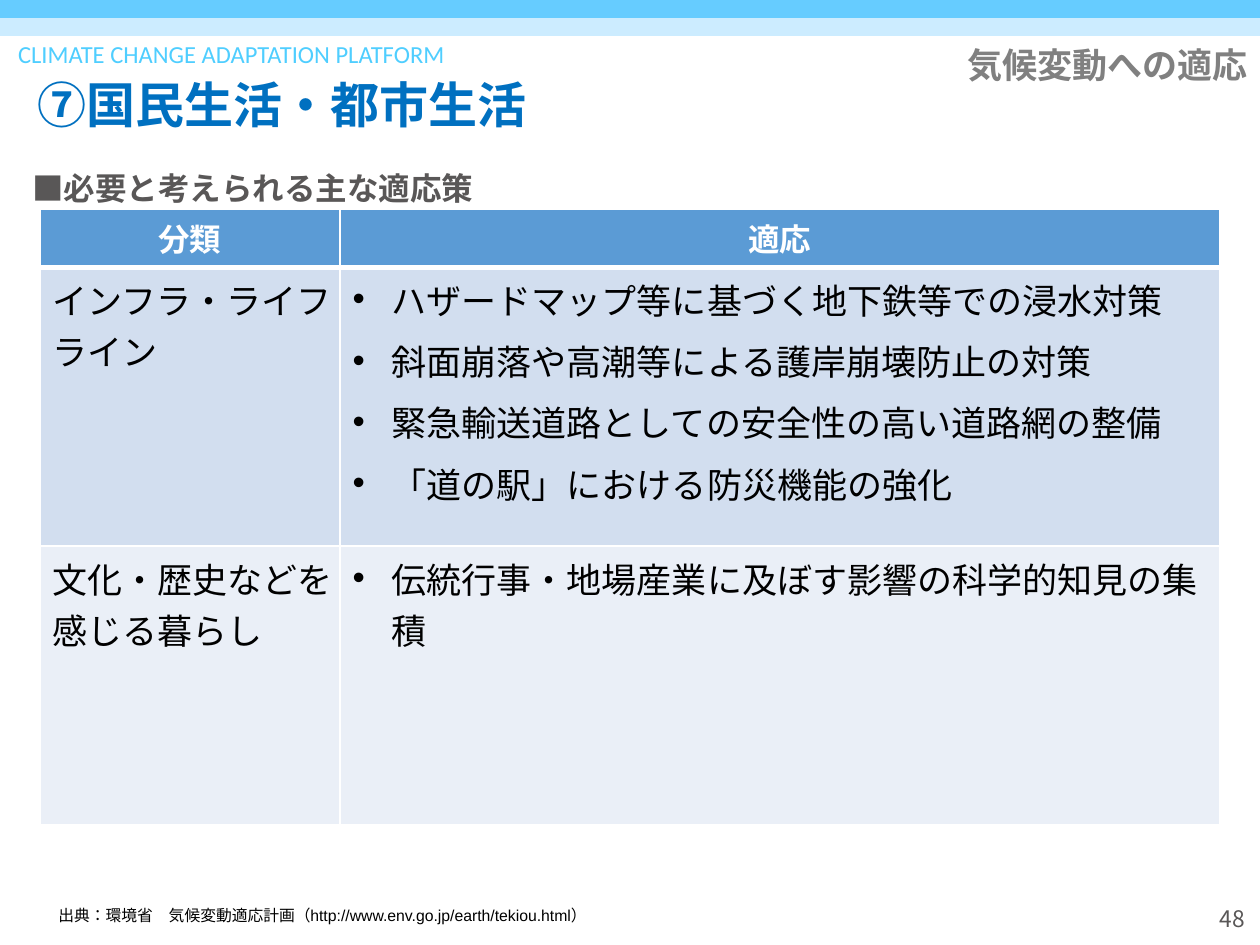
from pptx import Presentation
from pptx.dml.color import RGBColor
from pptx.enum.shapes import MSO_SHAPE
from pptx.enum.text import MSO_ANCHOR, PP_ALIGN
from pptx.oxml.ns import qn
from pptx.util import Pt
from lxml.etree import SubElement

SKY = RGBColor(0x66, 0xCC, 0xFF)
PALE = RGBColor(0xCC, 0xEC, 0xFF)
CYAN = RGBColor(0x4F, 0xCE, 0xFF)
BLUE = RGBColor(0x00, 0x70, 0xC0)
GRAY = RGBColor(0x80, 0x80, 0x80)
DARK = RGBColor(0x59, 0x57, 0x57)
BLACK = RGBColor(0, 0, 0)
WHITE = RGBColor(0xFF, 0xFF, 0xFF)
HEAD = RGBColor(0x5B, 0x9B, 0xD5)
BANDS = [RGBColor(0xD2, 0xDE, 0xEF), RGBColor(0xEA, 0xEF, 0xF7)]
NOTO = "Noto Sans CJK JP"

STRIPES = [SKY, PALE]
LABELS = [
    ((18, 36, 1231, 32), ["CLIMATE CHANGE ADAPTATION PLATFORM"],
     dict(size=14, font="Calibri", color=CYAN, space=Pt(18.7), inset=0)),
    ((0, 16, 1260, 183), ["⑦国民生活・都市生活"],
     dict(size=28, font=NOTO, color=BLUE, bold=True, space=0.9,
          indent=25, anchor=MSO_ANCHOR.MIDDLE)),
    ((46, 893, 1152, 45),
     ["出典：環境省　気候変動適応計画（http://www.env.go.jp/earth/tekiou.html）"],
     dict(size=9, anchor=MSO_ANCHOR.MIDDLE)),
    ((621, 42, 639, 49), ["気候変動への適応"],
     dict(size=20, font=NOTO, color=GRAY, bold=True, space=0.9,
          align=PP_ALIGN.RIGHT)),
    ((20, 155, 1164, 289), ["■必要と考えられる主な適応策"],
     dict(size=18, font=NOTO, color=DARK, bold=True, space=Pt(26))),
    ((973, 893, 284, 50), ["48"],
     dict(size=13, font=NOTO, color=DARK, align=PP_ALIGN.RIGHT,
          anchor=MSO_ANCHOR.MIDDLE)),
]
TITLES = ["分類", "適応"]
ROWS = [
    ("インフラ・ライフライン", [
        "ハザードマップ等に基づく地下鉄等での浸水対策",
        "斜面崩落や高潮等による護岸崩壊防止の対策",
        "緊急輸送道路としての安全性の高い道路網の整備",
        "「道の駅」における防災機能の強化",
    ]),
    ("文化・歴史などを感じる暮らし", [
        "伝統行事・地場産業に及ぼす影響の科学的知見の集積",
    ]),
]
WIDTHS = [300, 880]
HEIGHTS = [49, 279, 279]


def px(n):
    return round(n * 914400 / 126)


def write(frame, lines, size=20, font="Arial", color=BLACK, bold=False,
          align=PP_ALIGN.LEFT, space=None, indent=0, bullet=False):
    for i, line in enumerate(lines):
        para = frame.paragraphs[0] if i == 0 else frame.add_paragraph()
        props = para._p.get_or_add_pPr()
        if bullet:
            props.set("marL", str(px(39)))
            props.set("indent", str(-px(39)))
            SubElement(props, qn("a:buFont")).set("typeface", "Arial")
            SubElement(props, qn("a:buChar")).set("char", "•")
        elif indent:
            props.set("marL", str(px(indent)))
        para.alignment = align
        if space:
            para.line_spacing = space
        if i:
            para.space_before = Pt(6)
        run = para.add_run()
        run.text = line
        run.font.size = Pt(size)
        run.font.bold = bold
        run.font.color.rgb = color
        run.font.name = font
        mark = run._r.get_or_add_rPr()
        mark.set("lang", "ja-JP")
        SubElement(mark, qn("a:ea")).set("typeface", NOTO)


def label(slide, area, lines, anchor=MSO_ANCHOR.TOP, inset=None, **form):
    frame = slide.shapes.add_textbox(*map(px, area)).text_frame
    frame.word_wrap = True
    frame.vertical_anchor = anchor
    if inset is not None:
        frame.margin_left = frame.margin_right = inset
        frame.margin_top = frame.margin_bottom = inset
    write(frame, lines, **form)


def paint(cell, fill, base=1):
    props = cell._tc.get_or_add_tcPr()
    for side, width in zip("LRTB", (1, 1, 1, base)):
        line = SubElement(props, qn("a:ln" + side), w=str(Pt(width)))
        solid = SubElement(line, qn("a:solidFill"))
        SubElement(solid, qn("a:srgbClr")).set("val", str(WHITE))
    cell.fill.solid()
    cell.fill.fore_color.rgb = fill


def grid(slide):
    area = (40, 209, sum(WIDTHS), sum(HEIGHTS))
    table = slide.shapes.add_table(
        len(HEIGHTS), len(WIDTHS), *map(px, area)).table
    for col, width in zip(table.columns, WIDTHS):
        col.width = px(width)
    for row, height in zip(table.rows, HEIGHTS):
        row.height = px(height)
    for c, title in enumerate(TITLES):
        cell = table.cell(0, c)
        paint(cell, HEAD, base=3)
        cell.vertical_anchor = MSO_ANCHOR.MIDDLE
        write(cell.text_frame, [title], size=18, color=WHITE, bold=True,
              align=PP_ALIGN.CENTER)
    for r, (group, items) in enumerate(ROWS, 1):
        for c, lines in enumerate(([group], items)):
            cell = table.cell(r, c)
            paint(cell, BANDS[r - 1])
            if c == 0:
                cell.margin_right = px(2)
            write(cell.text_frame, lines, bullet=c == 1)


def main():
    deck = Presentation()
    deck.slide_width, deck.slide_height = px(1260), px(945)
    slide = deck.slides.add_slide(deck.slide_layouts[6])
    for i, color in enumerate(STRIPES):
        bar = slide.shapes.add_shape(
            MSO_SHAPE.RECTANGLE, 0, px(18 * i), px(1260), px(18))
        bar.shadow.inherit = False
        bar.fill.solid()
        bar.fill.fore_color.rgb = color
        bar.line.fill.background()
    grid(slide)
    for area, lines, form in LABELS:
        label(slide, area, lines, **form)
    deck.save("out.pptx")


if __name__ == "__main__":
    main()
